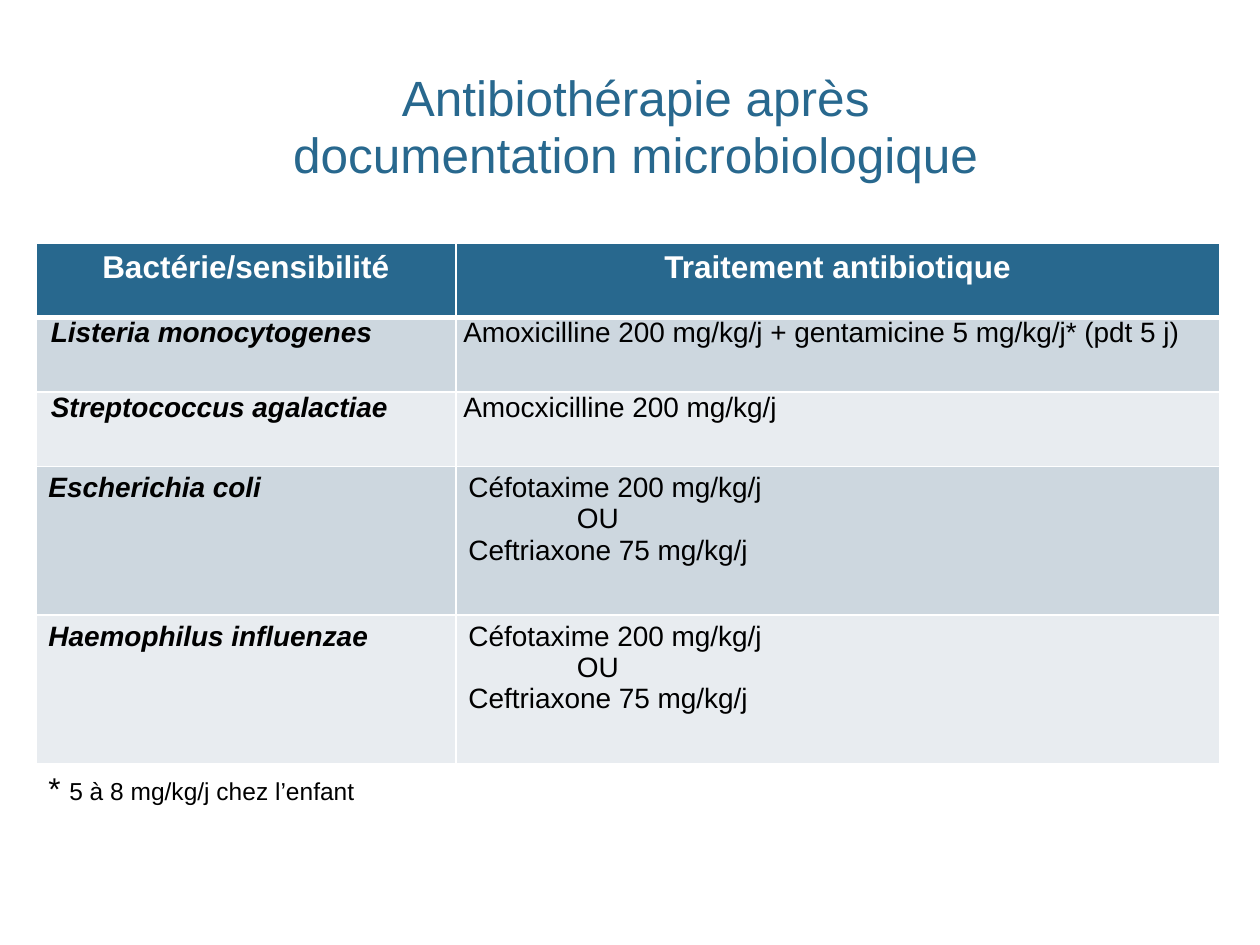
from lxml import etree
from pptx import Presentation
from pptx.dml.color import RGBColor
from pptx.enum.text import MSO_ANCHOR, PP_ALIGN
from pptx.oxml.ns import qn
from pptx.util import Pt

CENTER, LEFT, JUSTIFY = PP_ALIGN.CENTER, PP_ALIGN.LEFT, PP_ALIGN.JUSTIFY
TOP = MSO_ANCHOR.TOP
BLUE, WHITE, BLACK = "28688E", "FFFFFF", "000000"
BANDS = ("CDD7DF", "E8ECF0")
HEADINGS = ("Bactérie/sensibilité", "Traitement antibiotique")
CHOICE = ("Céfotaxime 200 mg/kg/j", "OU", "Ceftriaxone 75 mg/kg/j")
TREATMENTS = (
    ("Listeria monocytogenes",
     ("Amoxicilline 200 mg/kg/j + gentamicine 5 mg/kg/j* (pdt 5 j)",)),
    ("Streptococcus agalactiae", ("Amocxicilline 200 mg/kg/j",)),
    ("Escherichia coli", CHOICE),
    ("Haemophilus influenzae", CHOICE),
)
COLUMN_WIDTHS = (240, 436.5)
ROW_HEIGHTS = (42.5, 42.5, 42.5, 85, 85)


def color(value):
    """Return the colour for a hex string."""
    return RGBColor.from_string(value)


def write(para, text, size=16, fill=BLACK, bold=False, italic=False, align=LEFT):
    """Append formatted text to a paragraph."""
    para.alignment = align
    span = para.add_run()
    span.text = text
    font = span.font
    font.name, font.size, font.bold, font.italic = "Arial", Pt(size), bold, italic
    font.color.rgb = color(fill)


def write_lines(frame, lines, **style):
    """Write one paragraph for each line and return the paragraphs."""
    for _ in lines[1:]:
        frame.add_paragraph()
    for para, line in zip(frame.paragraphs, lines):
        write(para, line, **style)
    return frame.paragraphs


def place_title(page, left, top, width, height):
    """Fill the title placeholder."""
    title = page.shapes.title
    title.left, title.top, title.width, title.height = map(Pt, (left, top, width, height))
    frame = title.text_frame
    frame.word_wrap = True
    frame.vertical_anchor = TOP
    frame.margin_top = Pt(7)
    lines = ("Antibiothérapie après", "documentation microbiologique")
    for para in write_lines(frame, lines, size=28.3, fill=BLUE, align=CENTER):
        para.line_spacing = 0.97
        para.space_before = Pt(0)


def format_cell(cell, fill, bottom=1):
    """Set the fill and the white borders of a cell."""
    properties = cell._tc.get_or_add_tcPr()
    for side, width in (("L", 1), ("R", 1), ("T", 1), ("B", bottom)):
        line = etree.SubElement(properties, qn(f"a:ln{side}"), w=str(Pt(width)))
        solid = etree.SubElement(line, qn("a:solidFill"))
        etree.SubElement(solid, qn("a:srgbClr"), val=WHITE)
    cell.fill.solid()
    cell.fill.fore_color.rgb = color(fill)


def tighten(cell, left):
    """Remove the vertical margins of a cell and narrow its sides."""
    cell.margin_top = cell.margin_bottom = Pt(0)
    cell.margin_left, cell.margin_right = Pt(left), Pt(4.3)


def place_table(page, left, top, width, height):
    """Add the table of bacteria and treatments."""
    table = page.shapes.add_table(
        len(ROW_HEIGHTS), len(COLUMN_WIDTHS), Pt(left), Pt(top), Pt(width), Pt(height)).table
    for column, size in zip(table.columns, COLUMN_WIDTHS):
        column.width = Pt(size)
    for row, size in zip(table.rows, ROW_HEIGHTS):
        row.height = Pt(size)
    for index, heading in enumerate(HEADINGS):
        cell = table.cell(0, index)
        format_cell(cell, BLUE, bottom=3)
        write(cell.text_frame.paragraphs[0], heading, size=18, fill=WHITE,
              bold=True, align=CENTER)
    for index, (bacterium, drugs) in enumerate(TREATMENTS):
        name_cell, drug_cell = table.rows[index + 1].cells
        for cell in (name_cell, drug_cell):
            format_cell(cell, BANDS[index % 2])
        if len(drugs) == 1:
            tighten(name_cell, 8.6)
            tighten(drug_cell, 4.3)
        write(name_cell.text_frame.paragraphs[0], bacterium, bold=True, italic=True)
        for para in write_lines(drug_cell.text_frame, drugs, align=JUSTIFY):
            if para.text == "OU":
                para._p.get_or_add_pPr().set("marL", str(Pt(62)))


def place_footnote(page, left, top, width, height):
    """Add the note on the dose for children."""
    box = page.shapes.add_textbox(Pt(left), Pt(top), Pt(width), Pt(height))
    box.text_frame.word_wrap = False
    para = box.text_frame.paragraphs[0]
    write(para, "* ", size=18)
    write(para, "5 à 8 mg/kg/j chez l’enfant", size=14)


def main():
    """Build and save the deck."""
    deck = Presentation()
    deck.slide_width, deck.slide_height = Pt(720), Pt(540)
    page = deck.slides.add_slide(deck.slide_layouts[5])
    place_title(page, 30, 33, 667, 87)
    place_table(page, 20.5, 139, sum(COLUMN_WIDTHS), sum(ROW_HEIGHTS))
    place_footnote(page, 20.5, 435.6, 214, 29)
    deck.save("out.pptx")


if __name__ == "__main__":
    main()
